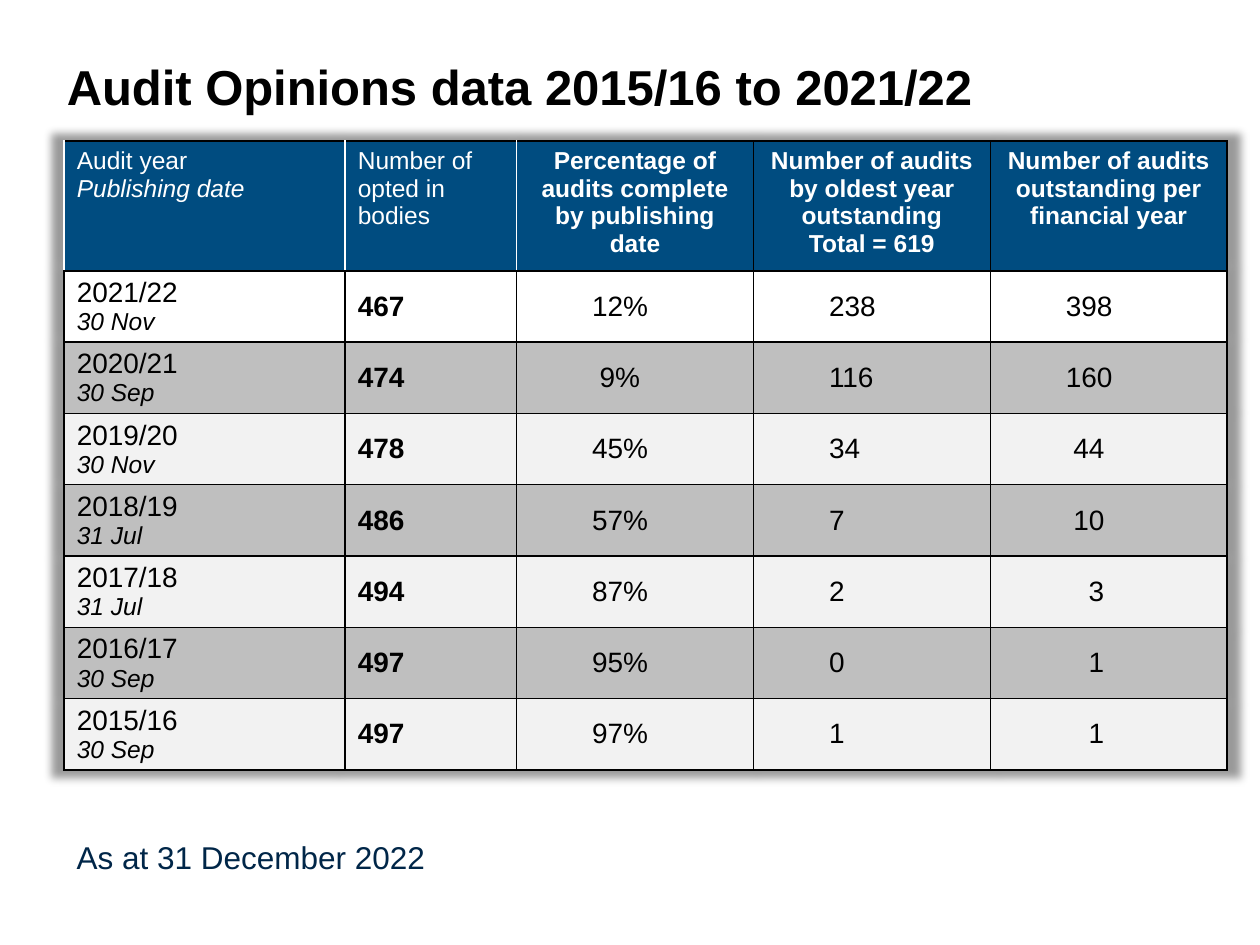
"""Build a slide with a table of audit opinions data by year."""
import pptx
import pptx.dml.color
import pptx.enum.text
import pptx.oxml
import pptx.oxml.ns
import pptx.util
from pptx.util import Inches

COLORS = {"header": "004C80", "white": "FFFFFF", "black": "000000",
          "grey": "BFBFBF", "pale": "F2F2F2", "note": "002648"}
NAMESPACE = pptx.oxml.ns.nsdecls("a")
ALIGN = pptx.enum.text.PP_ALIGN
ANCHOR = pptx.enum.text.MSO_ANCHOR
STEP = 0.06


def write(para, text, color, **formats):
    span = para.add_run()
    span.text = text
    span.font.color.rgb = pptx.dml.color.RGBColor.from_string(COLORS[color])
    settings = {"name": "Arial", "bold": False, "italic": False, **formats}
    settings["size"] = pptx.util.Pt(settings["size"])
    for name, value in settings.items():
        setattr(span.font, name, value)


def style_cell(cell, fill, sides):
    cell.fill.solid()
    cell.fill.fore_color.rgb = pptx.dml.color.RGBColor.from_string(COLORS[fill])
    properties = cell._tc.get_or_add_tcPr()
    for index, (side, color) in enumerate(sides.items()):
        properties.insert(index, pptx.oxml.parse_xml(
            f'<a:{side} {NAMESPACE} w="12700"><a:solidFill>'
            f'<a:srgbClr val="{COLORS[color]}"/></a:solidFill></a:{side}>'))


deck = pptx.Presentation()
deck.slide_width, deck.slide_height = Inches(10), Inches(7.5)
page = deck.slides.add_slide(deck.slide_layouts[5])

title = page.shapes.title
title.left, title.top, title.width, title.height = map(Inches, (0.43, 0.16, 9, 1.04))
title.text_frame.auto_size = pptx.enum.text.MSO_AUTO_SIZE.NONE
title.text_frame.vertical_anchor = ANCHOR.MIDDLE
title_para = title.text_frame.paragraphs[0]
title_para.alignment = ALIGN.LEFT
write(title_para, "Audit Opinions data 2015/16 to 2021/22", "black", size=28, bold=True)

headers = [
    ["Audit year", "Publishing date"],
    ["Number of opted in bodies"],
    ["Percentage of audits complete by publishing date"],
    ["Number of audits by oldest year outstanding", "Total = 619"],
    ["Number of audits outstanding per financial year"],
]
records = [
    ("2021/22", "30 Nov", "467", "12%", "238", "398"),
    ("2020/21", "30 Sep", "474", "9%", "116", "160"),
    ("2019/20", "30 Nov", "478", "45%", "34", "44"),
    ("2018/19", "31 Jul", "486", "57%", "7", "10"),
    ("2017/18", "31 Jul", "494", "87%", "2", "3"),
    ("2016/17", "30 Sep", "497", "95%", "0", "1"),
    ("2015/16", "30 Sep", "497", "97%", "1", "1"),
]
column_widths = [2.23, 1.36, 1.88, 1.88, 1.88]
row_heights = [1.03] + [0.564] * len(records)

frame = page.shapes.add_table(
    len(row_heights), len(column_widths), Inches(0.51), Inches(1.12),
    Inches(sum(column_widths)), Inches(sum(row_heights)))
table = frame.table
for column, width in zip(table.columns, column_widths):
    column.width = Inches(width)
for row, height in zip(table.rows, row_heights):
    row.height = Inches(height)
table._tbl.tblPr.insert(0, pptx.oxml.parse_xml(
    f'<a:effectLst {NAMESPACE}><a:outerShdw blurRad="63500" sx="102000" sy="102000" '
    'algn="ctr" rotWithShape="0"><a:srgbClr val="000000"><a:alpha val="40000"/>'
    '</a:srgbClr></a:outerShdw></a:effectLst>'))

for index, lines in enumerate(headers):
    cell = table.cell(0, index)
    style_cell(cell, "header", {
        "lnL": "white" if index < 3 else "black",
        "lnR": "white" if index < 2 else "black",
        "lnT": "black", "lnB": "black"})
    for number, line in enumerate(lines):
        para = cell.text_frame.paragraphs[0] if number == 0 else cell.text_frame.add_paragraph()
        para.alignment = ALIGN.CENTER if index > 1 else ALIGN.LEFT
        write(para, line, "white", size=14, bold=index > 1,
              italic=index == 0 and number == 1)

for row_index, (year, date, bodies, *values) in enumerate(records, start=1):
    fill = "white" if row_index == 1 else "pale" if row_index % 2 else "grey"
    cells = [table.cell(row_index, index) for index in range(len(column_widths))]
    for cell in cells:
        cell.vertical_anchor = ANCHOR.MIDDLE
        style_cell(cell, fill, dict.fromkeys(("lnL", "lnR", "lnT", "lnB"), "black"))
    write(cells[0].text_frame.paragraphs[0], year, "black", size=16)
    write(cells[0].text_frame.add_paragraph(), date, "black", size=14, italic=True)
    write(cells[1].text_frame.paragraphs[0], bodies, "black", size=16, bold=True)
    shifts = [3 - len(values[0]), 0, {3: 0, 2: 1, 1: 3}[len(values[2])]]
    for cell, value, shift in zip(cells[2:], values, shifts):
        para = cell.text_frame.paragraphs[0]
        para.level = 1
        properties = para._p.get_or_add_pPr()
        properties.set("marL", str(Inches(0.5 + shift * STEP)))
        properties.set("indent", "0")
        write(para, value, "black", size=16)

note = page.shapes.add_textbox(Inches(0.51), Inches(6.6), Inches(4.28), Inches(0.4))
note.text_frame.word_wrap = True
note.text_frame.auto_size = pptx.enum.text.MSO_AUTO_SIZE.SHAPE_TO_FIT_TEXT
write(note.text_frame.paragraphs[0], "As at 31 December 2022", "note", size=18)

deck.save("out.pptx")
